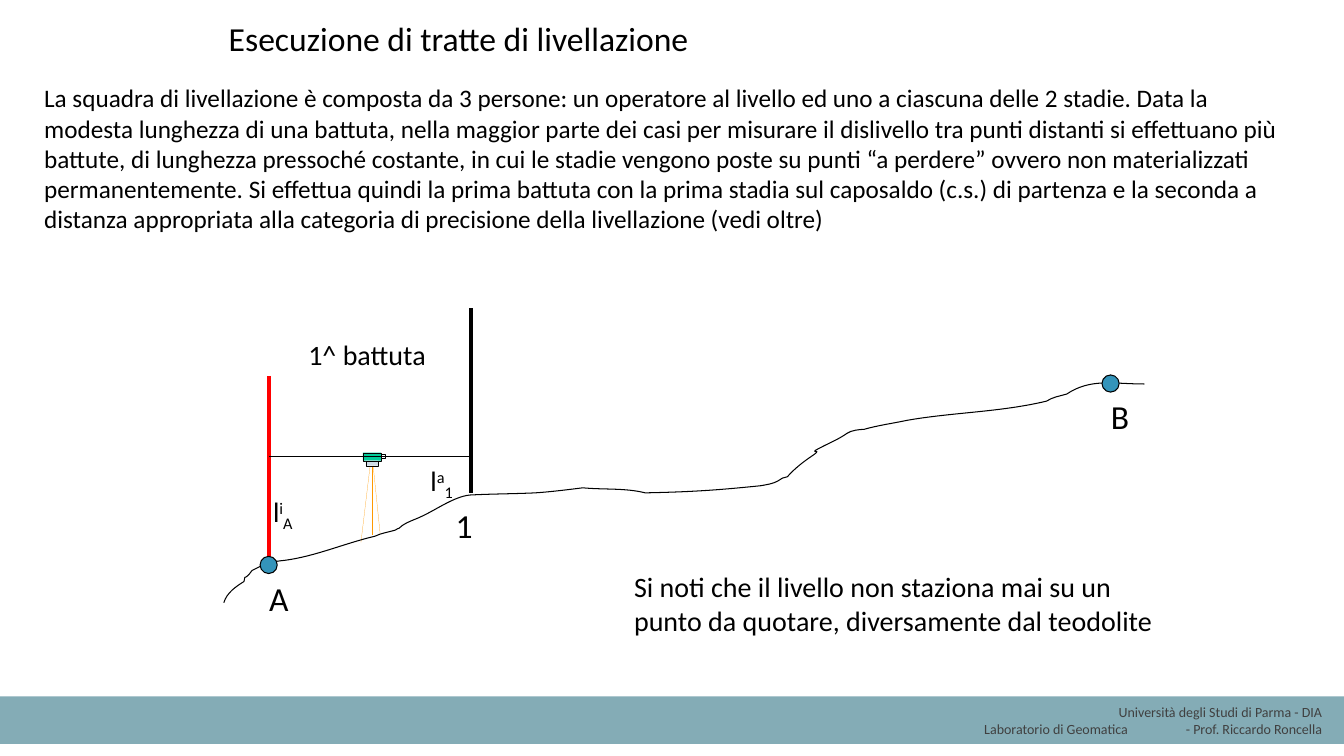
from dataclasses import dataclass
from typing import NamedTuple

from lxml.etree import SubElement
from pptx import Presentation
from pptx.dml.color import RGBColor
from pptx.enum.shapes import MSO_CONNECTOR, MSO_SHAPE
from pptx.enum.text import MSO_AUTO_SIZE, PP_ALIGN
from pptx.oxml.ns import qn
from pptx.util import Inches, Pt

COLORS = {
    "black": "000000", "gray": "404040", "band": "84ACB6", "point": "3494BA",
    "staff": "FF0000", "leg": "FF9900", "body": "00CC99", "base": "CEDBE6",
    "white": "FFFFFF",
}
HAIR = 0.13
THIN = 0.75
THICK = 3


class Run(NamedTuple):
    text: str
    shift: int = 0


@dataclass
class Label:
    box: tuple[float, float, float, float]
    paras: list[list[Run]]
    size: float
    wrap: bool = False
    color: str = "black"
    align: PP_ALIGN = PP_ALIGN.LEFT
    tab: float = 0


@dataclass
class Line:
    start: tuple[float, float]
    end: tuple[float, float]
    color: str
    width: float


@dataclass
class Solid:
    box: tuple[float, float, float, float]
    fill: str
    width: float = 0
    kind: MSO_SHAPE = MSO_SHAPE.RECTANGLE


def rgb(name: str) -> RGBColor:
    return RGBColor.from_string(COLORS[name])


def add_label(shapes, label: Label) -> None:
    frame = shapes.add_textbox(*map(Inches, label.box)).text_frame
    frame.word_wrap = label.wrap
    frame.auto_size = MSO_AUTO_SIZE.SHAPE_TO_FIT_TEXT
    for i, runs in enumerate(label.paras):
        para = frame.add_paragraph() if i else frame.paragraphs[0]
        para.alignment = label.align
        if label.tab:
            tabs = SubElement(para._p.get_or_add_pPr(), qn("a:tabLst"))
            SubElement(tabs, qn("a:tab"), pos=str(Inches(label.tab)), algn="l")
        for item in runs:
            run = para.add_run()
            run.text = item.text
            run.font.name = "Calibri"
            run.font.size = Pt(label.size)
            run.font.color.rgb = rgb(label.color)
            if item.shift:
                run.font._element.set("baseline", str(item.shift * 1000))


def add_line(shapes, line: Line) -> None:
    link = shapes.add_connector(
        MSO_CONNECTOR.STRAIGHT, *map(Inches, line.start + line.end))
    link.line.color.rgb = rgb(line.color)
    link.line.width = Pt(line.width)
    SubElement(link._element.spPr, qn("a:effectLst"))


def add_solid(shapes, solid: Solid) -> None:
    shape = shapes.add_shape(solid.kind, *map(Inches, solid.box))
    shape.shadow.inherit = False
    shape.fill.solid()
    shape.fill.fore_color.rgb = rgb(solid.fill)
    if solid.width:
        shape.line.color.rgb = rgb("black")
        shape.line.width = Pt(solid.width)
    else:
        shape.line.fill.background()


def add_curve(shapes, start: tuple[float, float], curves: list[tuple]) -> None:
    build = shapes.build_freeform(*map(Inches, start))
    build.add_line_segments(
        [(Inches(c[i]), Inches(c[i + 1])) for c in curves for i in (0, 2, 4)],
        close=False)
    shape = build.convert_to_shape()
    track = next(shape._element.iter(qn("a:moveTo"))).getparent()
    legs = track.findall(qn("a:lnTo"))
    for i in range(0, len(legs), 3):
        bend = SubElement(track, qn("a:cubicBezTo"))
        for leg in legs[i:i + 3]:
            bend.append(leg[0])
            track.remove(leg)
    shape.shadow.inherit = False
    shape.fill.background()
    shape.line.color.rgb = rgb("black")
    shape.line.width = Pt(THIN)


GROUND = [
    (2.25, 5.88, 2.34, 5.82, 2.42, 5.77),
    (2.44, 5.69, 2.41, 5.76, 2.47, 5.7),
    (2.48, 5.69, 2.49, 5.67, 2.5, 5.66),
    (2.51, 5.65, 2.53, 5.65, 2.54, 5.64),
    (2.64, 5.59, 2.71, 5.57, 2.82, 5.56),
    (3.13, 5.52, 3.42, 5.39, 3.72, 5.32),
    (3.78, 5.29, 3.85, 5.28, 3.92, 5.26),
    (3.93, 5.25, 3.96, 5.24, 3.96, 5.24),
    (4.02, 5.18, 4.11, 5.16, 4.19, 5.12),
    (4.34, 5.05, 4.53, 4.91, 4.69, 4.91),
    (4.9, 4.9, 5.1, 4.9, 5.31, 4.89),
    (5.46, 4.88, 5.62, 4.86, 5.78, 4.84),
    (5.99, 4.86, 6.2, 4.84, 6.4, 4.89),
    (6.89, 4.88, 7.14, 4.86, 7.54, 4.82),
    (7.6, 4.81, 7.67, 4.8, 7.72, 4.77),
    (7.78, 4.73, 7.75, 4.75, 7.81, 4.73),
    (7.88, 4.65, 7.97, 4.58, 8.06, 4.52),
    (8.19, 4.43, 7.96, 4.53, 8.18, 4.42),
    (8.26, 4.38, 8.33, 4.35, 8.4, 4.3),
    (8.44, 4.27, 8.53, 4.26, 8.57, 4.26),
    (8.71, 4.22, 8.86, 4.2, 9, 4.17),
    (9.46, 4.09, 9.92, 4.09, 10.38, 3.98),
    (10.44, 3.94, 10.51, 3.93, 10.58, 3.91),
    (10.82, 3.75, 11.04, 3.81, 11.35, 3.81),
]
LEVEL = [
    Line((3.7, 4.61), (3.77, 5.29), "leg", HAIR),
    Solid((3.6, 4.49, 0.18, 0.08), "body", HAIR),
    Solid((3.63, 4.57, 0.12, 0.05), "base", HAIR),
    Solid((3.78, 4.51, 0.04, 0.04), "white", HAIR),
    Line((3.67, 4.63), (3.58, 5.38), "leg", HAIR),
    Line((3.69, 4.63), (3.69, 5.31), "leg", HAIR),
]
SIGHTS = [
    Line((2.67, 3.73), (2.67, 5.56), "staff", THICK),
    Line((4.67, 3.06), (4.67, 4.89), "black", THICK),
    Line((2.67, 4.53), (4.67, 4.53), "black", THIN),
]
MARKS = [
    Solid((x, y, 0.17, 0.17), "point", THIN, MSO_SHAPE.OVAL)
    for x, y in ((2.58, 5.52), (10.93, 3.72))
]
FOOTER = [
    Solid((0, 6.91, 13.33, 0.47), "band"),
    Label((9.06, 6.93, 4.15, 0.44), [
        [Run("Università degli Studi di Parma - DIA")],
        [Run("Laboratorio di Geomatica\t- Prof. Riccardo Roncella")],
    ], 10, True, "gray", PP_ALIGN.RIGHT, 2),
]
LABELS = [
    Label((2.17, 0.13, 4.85, 0.51), [[Run("Esecuzione di tratte di livellazione")]], 24),
    Label((0.34, 0.77, 12.66, 1.62), [[Run(
        "La squadra di livellazione è composta da 3 persone: un operatore al livello "
        "ed uno a ciascuna delle 2 stadie. Data la modesta lunghezza di una battuta, "
        "nella maggior parte dei casi per misurare il dislivello tra punti distanti si "
        "effettuano più battute, di lunghezza pressoché costante, in cui le stadie "
        "vengono poste su punti “a perdere” ovvero non materializzati permanentemente. "
        "Si effettua quindi la prima battuta con la prima stadia sul caposaldo (c.s.) "
        "di partenza e la seconda a distanza appropriata alla categoria di precisione "
        "della livellazione (vedi oltre)")]], 18, True),
    Label((2.57, 5.68, 0.39, 0.5), [[Run("A")]], 24),
    Label((10.92, 3.88, 0.38, 0.5), [[Run("B")]], 24),
    Label((2.96, 3.3, 1.37, 0.44), [[Run("1^ battuta")]], 20),
    Label((2.61, 4.86, 0.41, 0.44), [[Run("l"), Run("i", 30), Run("A", -25)]], 20),
    Label((4.42, 4.96, 0.37, 0.5), [[Run("1")]], 24),
    Label((4.17, 4.55, 0.45, 0.44), [[Run("l"), Run("a", 30), Run("1", -25)]], 20),
    Label((6.19, 5.6, 5.59, 0.77), [[Run(
        "Si noti che il livello non staziona mai su un punto da quotare, "
        "diversamente dal teodolite")]], 20, True),
]
DRAW = {Label: add_label, Line: add_line, Solid: add_solid}


def draw(shapes, items: list) -> None:
    for item in items:
        DRAW[type(item)](shapes, item)


def main() -> None:
    deck = Presentation()
    deck.slide_width, deck.slide_height = Inches(13.33), Inches(7.5)
    shapes = deck.slides.add_slide(deck.slide_layouts[6]).shapes
    draw(shapes, FOOTER)
    draw(shapes.add_group_shape().shapes, LEVEL)
    add_curve(shapes, (2.22, 5.98), GROUND)
    draw(shapes, SIGHTS + MARKS + LABELS)
    deck.save("out.pptx")


if __name__ == "__main__":
    main()
